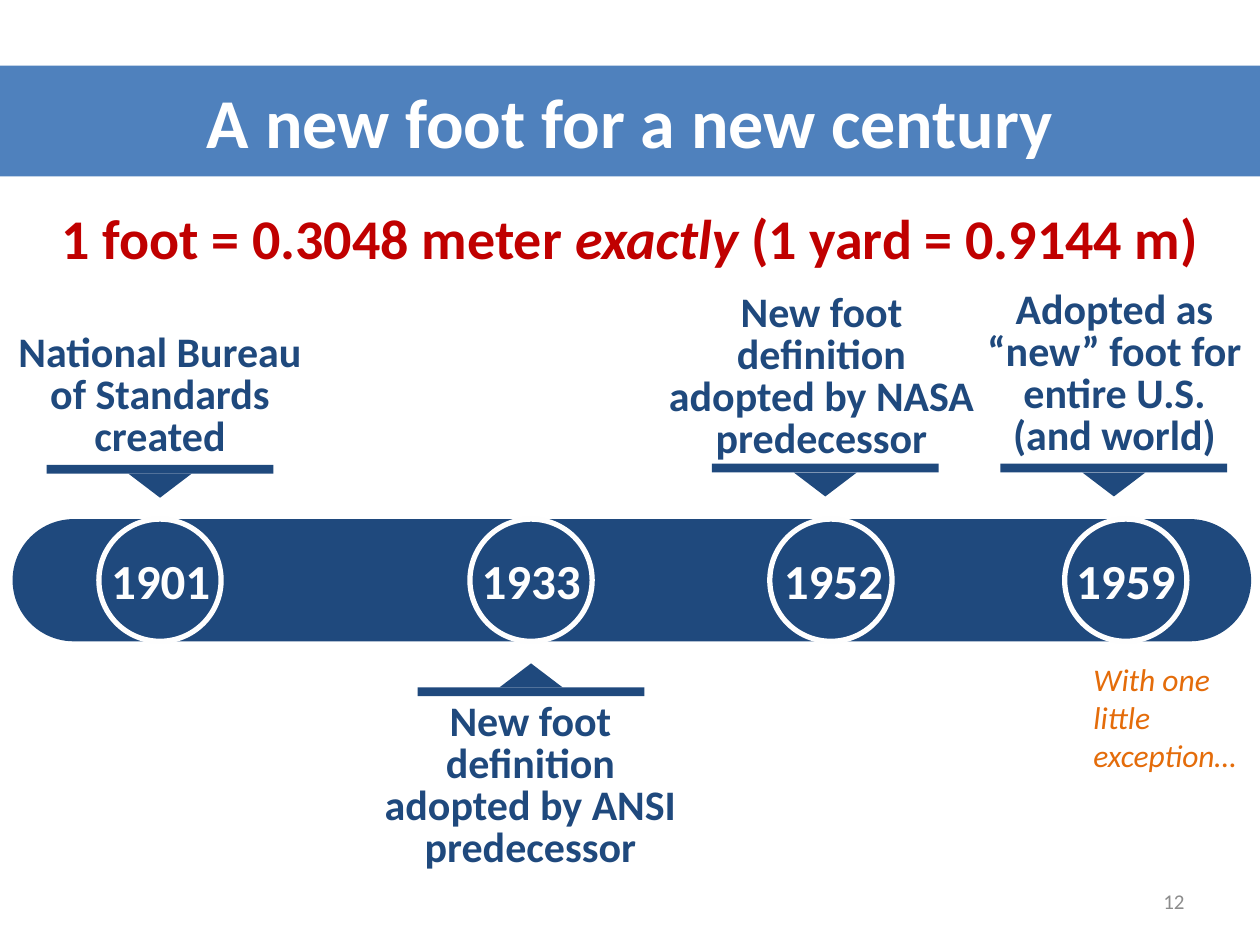
from dataclasses import dataclass

from pptx import Presentation
from pptx.dml.color import RGBColor
from pptx.enum import shapes, text
from pptx.util import Emu, Inches, Pt

COLUMNS, ROWS = 100, 75
NAVY, BLUE, RED, ORANGE = "1F497D", "4F81BD", "C00000", "E46C0A"
WHITE, OFF_WHITE, GREY = "FFFFFF", "FEFEFE", "8C8C8C"
FONT = "Calibri"
SHAPE, ALIGN, ANCHOR = shapes.MSO_SHAPE, text.PP_ALIGN, text.MSO_ANCHOR

BAND_TOP, BAND_HEIGHT = 41.2, 9.7
POINTER_WIDTH, POINTER_HEIGHT = 5, 1.9
RULE_WIDTH, RULE_HEIGHT = 18, 0.7


@dataclass(frozen=True)
class Box:
    """A place on the slide, in grid columns and rows."""
    left: float
    top: float
    width: float
    height: float


@dataclass(frozen=True)
class Event:
    year: str
    caption: str
    caption_box: Box
    circle_center: float
    year_center: float
    pointer_center: float
    rule_top: float
    above: bool = True


EVENTS = [
    Event("1901", "National Bureau of Standards created",
          Box(-0.8, 26, 27, 10.8), 12.7, 12.75, 12.7, 36.9),
    Event("1933", "New foot definition adopted by ANSI predecessor",
          Box(28.6, 55.3, 27, 15.2), 42.15, 42.15, 42.15, 54.55, above=False),
    Event("1952", "New foot definition adopted by NASA predecessor",
          Box(51.7, 22.8, 27, 14), 65.95, 66.15, 65.5, 36.8),
    Event("1959", "Adopted as “new” foot for entire U.S. (and world)",
          Box(77.2, 22.6, 22.5, 14.2), 89.35, 89.35, 88.4, 36.8),
]

prs = Presentation()
prs.slide_width, prs.slide_height = Inches(10), Inches(7.5)
slide = prs.slides.add_slide(prs.slide_layouts[5])


def color(hex_value: str) -> RGBColor:
    return RGBColor.from_string(hex_value)


def emu(box: Box) -> tuple[Emu, Emu, Emu, Emu]:
    column, row = prs.slide_width / COLUMNS, prs.slide_height / ROWS
    return (Emu(round(box.left * column)), Emu(round(box.top * row)),
            Emu(round(box.width * column)), Emu(round(box.height * row)))


def centered(center: float, top: float, width: float, height: float) -> Box:
    return Box(center - width / 2, top, width, height)


def format_runs(paragraph, size: float, hex_value: str, bold: bool = False,
                italic: bool = False) -> None:
    for run in paragraph.runs:
        font = run.font
        font.name, font.size = FONT, Pt(size)
        font.bold, font.italic = bold, italic
        font.color.rgb = color(hex_value)


def add_filled(kind, box: Box, outline: str | None = None):
    shape = slide.shapes.add_shape(kind, *emu(box))
    shape.shadow.inherit = False
    shape.fill.solid()
    shape.fill.fore_color.rgb = color(NAVY)
    if outline:
        shape.line.color.rgb = color(outline)
        shape.line.width = Pt(3)
    else:
        shape.line.fill.background()
    return shape


def add_label(words: str, box: Box, size: float, hex_value: str,
              align=ALIGN.CENTER, anchor=ANCHOR.TOP, bold: bool = False,
              italic: bool = False):
    frame = slide.shapes.add_textbox(*emu(box)).text_frame
    frame.word_wrap = True
    frame.vertical_anchor = anchor
    frame.text = words
    paragraph = frame.paragraphs[0]
    paragraph.alignment = align
    format_runs(paragraph, size, hex_value, bold, italic)
    return paragraph


def add_title(words: str) -> None:
    title = slide.shapes.title
    title.left, title.top, title.width, title.height = emu(Box(0, 5.2, COLUMNS, 8.8))
    title.fill.solid()
    title.fill.fore_color.rgb = color(BLUE)
    title.text_frame.text = words
    title.text_frame.vertical_anchor = ANCHOR.MIDDLE
    title.text_frame.paragraphs[0].alignment = ALIGN.CENTER
    format_runs(title.text_frame.paragraphs[0], 40, WHITE, bold=True)


def add_event(event: Event) -> None:
    add_filled(SHAPE.OVAL, centered(event.circle_center, BAND_TOP, BAND_HEIGHT, BAND_HEIGHT),
               outline=OFF_WHITE)
    add_label(event.year, centered(event.year_center, 43.2, 10.5, 5.7), 28, OFF_WHITE, bold=True)

    pointer_top = event.rule_top + (RULE_HEIGHT if event.above else -POINTER_HEIGHT)
    pointer = add_filled(SHAPE.ISOSCELES_TRIANGLE, centered(
        event.pointer_center, pointer_top, POINTER_WIDTH, POINTER_HEIGHT))
    pointer.rotation = 180 if event.above else 0
    add_filled(SHAPE.RECTANGLE, centered(
        event.pointer_center, event.rule_top, RULE_WIDTH, RULE_HEIGHT))

    caption = add_label(event.caption, event.caption_box, 24, NAVY, bold=True)
    caption.line_spacing = Pt(24)


add_title("A new foot for a new century")

band = add_filled(SHAPE.ROUNDED_RECTANGLE, Box(1, BAND_TOP, 98.3, BAND_HEIGHT))
band.adjustments[0] = 0.5
for event in EVENTS:
    add_event(event)

definition = add_label("1 foot = 0.3048 meter ", Box(0, 15.7, COLUMNS, 6.4), 32, RED)
for words in ("exactly ", "(1 yard = 0.9144 m)"):
    definition.add_run().text = words
format_runs(definition, 32, RED, bold=True)
definition.runs[1].font.italic = True

add_label("With one little exception…", Box(85.8, 51.9, 13.9, 10.1), 18, ORANGE,
          align=ALIGN.LEFT, italic=True)
add_label("12", Box(71.7, 69.5, 23.3, 4), 12, GREY, align=ALIGN.RIGHT, anchor=ANCHOR.MIDDLE)

prs.save("out.pptx")
